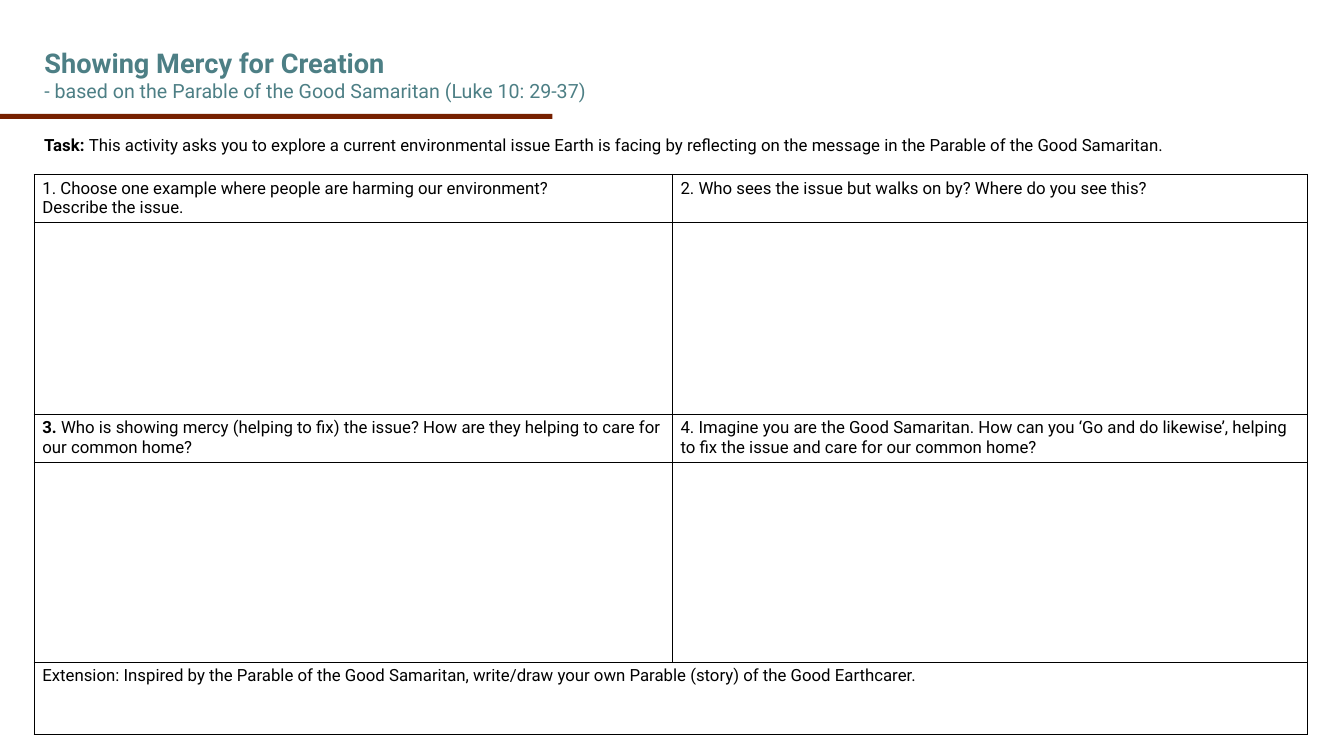
from dataclasses import dataclass

from lxml import etree
from pptx import Presentation
from pptx.dml.color import RGBColor
from pptx.enum.shapes import MSO_SHAPE
from pptx.enum.text import MSO_ANCHOR, MSO_AUTO_SIZE, PP_ALIGN
from pptx.oxml.ns import qn
from pptx.util import Inches, Pt

RECT = MSO_SHAPE.RECTANGLE
TOP = MSO_ANCHOR.TOP
LEFT = PP_ALIGN.LEFT
FIXED = MSO_AUTO_SIZE.NONE

FONT = "Roboto"
COLORS = {"title": "4D7F85", "text": "000000", "border": "000000", "bar": "762000"}
EDGE = 0.34
COLS = [6.33, 6.3]
ROWS = [0.48, 1.9, 0.48, 1.98, 0.72]


@dataclass
class Prompt:
    row: int
    col: int
    text: str
    lead: str = ""


PROMPTS = [
    Prompt(0, 0, "1. Choose one example where people are harming our environment?\vDescribe the issue."),
    Prompt(0, 1, "2. Who sees the issue but walks on by? Where do you see this?"),
    Prompt(2, 0, "Who is showing mercy (helping to fix) the issue? How are they helping "
                 "to care for our common home?", "3. "),
    Prompt(2, 1, "4. Imagine you are the Good Samaritan. How can you ‘Go and do likewise’, "
                 "helping to fix the issue and care for our common home?"),
    Prompt(4, 0, "Extension: Inspired by the Parable of the Good Samaritan, write/draw "
                 "your own Parable (story) of the Good Earthcarer."),
]


def style(par, size: float, color: str) -> None:
    par.alignment = LEFT
    par.font.name = FONT
    par.font.size = Pt(size)
    par.font.bold = False
    par.font.color.rgb = RGBColor.from_string(COLORS[color])


def write(par, text: str, lead: str = "") -> None:
    """Write a bold lead, if any, and then plain text with line breaks."""
    style(par, 12, "text")
    if lead:
        run = par.add_run()
        run.text = lead
        run.font.bold = True
    for i, line in enumerate(text.split("\v")):
        if i:
            par.add_line_break()
        par.add_run().text = line


def outline(cell) -> None:
    """Give a cell thin borders on all sides and no fill."""
    props = cell._tc.get_or_add_tcPr()
    for side in ("lnL", "lnR", "lnT", "lnB"):
        line = etree.SubElement(props, qn(f"a:{side}"), w=str(Pt(1)))
        fill = etree.SubElement(line, qn("a:solidFill"))
        etree.SubElement(fill, qn("a:srgbClr"), val=COLORS["border"])
    cell.fill.background()


def place(shape, left: float, top: float, width: float, height: float) -> None:
    shape.left, shape.top = Inches(left), Inches(top)
    shape.width, shape.height = Inches(width), Inches(height)


def add_title(slide) -> None:
    title = slide.shapes.title
    place(title, EDGE, 0.4, 7.98, 0.53)
    frame = title.text_frame
    frame.auto_size = FIXED
    frame.word_wrap = True
    frame.vertical_anchor = TOP
    frame.margin_top = Inches(0.06)
    par = frame.paragraphs[0]
    style(par, 14, "title")
    head = par.add_run()
    head.text = "Showing Mercy for Creation"
    head.font.size = Pt(19.4)
    head.font.bold = True
    par.add_line_break()
    par.add_run().text = "- based on the Parable of the Good Samaritan (Luke 10: 29-37)"


def add_task(slide) -> None:
    box = slide.shapes.add_textbox(Inches(EDGE), Inches(1.29), Inches(11.39), Inches(0.3))
    box.text_frame.word_wrap = True
    par = box.text_frame.paragraphs[0]
    write(par, "This activity asks you to explore a current environmental issue Earth is "
               "facing by reflecting on the message in the Parable of the Good Samaritan.", "Task: ")
    par.space_after = Pt(6.5)


def add_grid(slide) -> None:
    frame = slide.shapes.add_table(len(ROWS), len(COLS), Inches(EDGE), Inches(1.73),
                                   Inches(sum(COLS)), Inches(sum(ROWS)))
    table = frame.table
    table.first_row = table.horz_banding = False
    for col, width in zip(table.columns, COLS):
        col.width = Inches(width)
    for row, height in zip(table.rows, ROWS):
        row.height = Inches(height)
    for cell in table.iter_cells():
        outline(cell)
        cell.margin_left = cell.margin_right = Inches(0.08)
        cell.margin_top = cell.margin_bottom = Inches(0.04)
    last = len(ROWS) - 1
    table.cell(last, 0).merge(table.cell(last, 1))
    for item in PROMPTS:
        cell = table.cell(item.row, item.col)
        write(cell.text_frame.paragraphs[0], item.text, item.lead)


def add_bar(slide) -> None:
    bar = slide.shapes.add_shape(RECT, 0, Inches(1.13), Inches(5.48), Inches(0.05))
    bar.shadow.inherit = False
    bar.fill.solid()
    bar.fill.fore_color.rgb = RGBColor.from_string(COLORS["bar"])
    bar.line.fill.background()


def main() -> None:
    deck = Presentation()
    deck.slide_width, deck.slide_height = Inches(13.33), Inches(7.5)
    slide = deck.slides.add_slide(deck.slide_layouts[5])  # title only
    add_title(slide)
    add_task(slide)
    add_grid(slide)
    add_bar(slide)
    deck.save("out.pptx")


if __name__ == "__main__":
    main()
